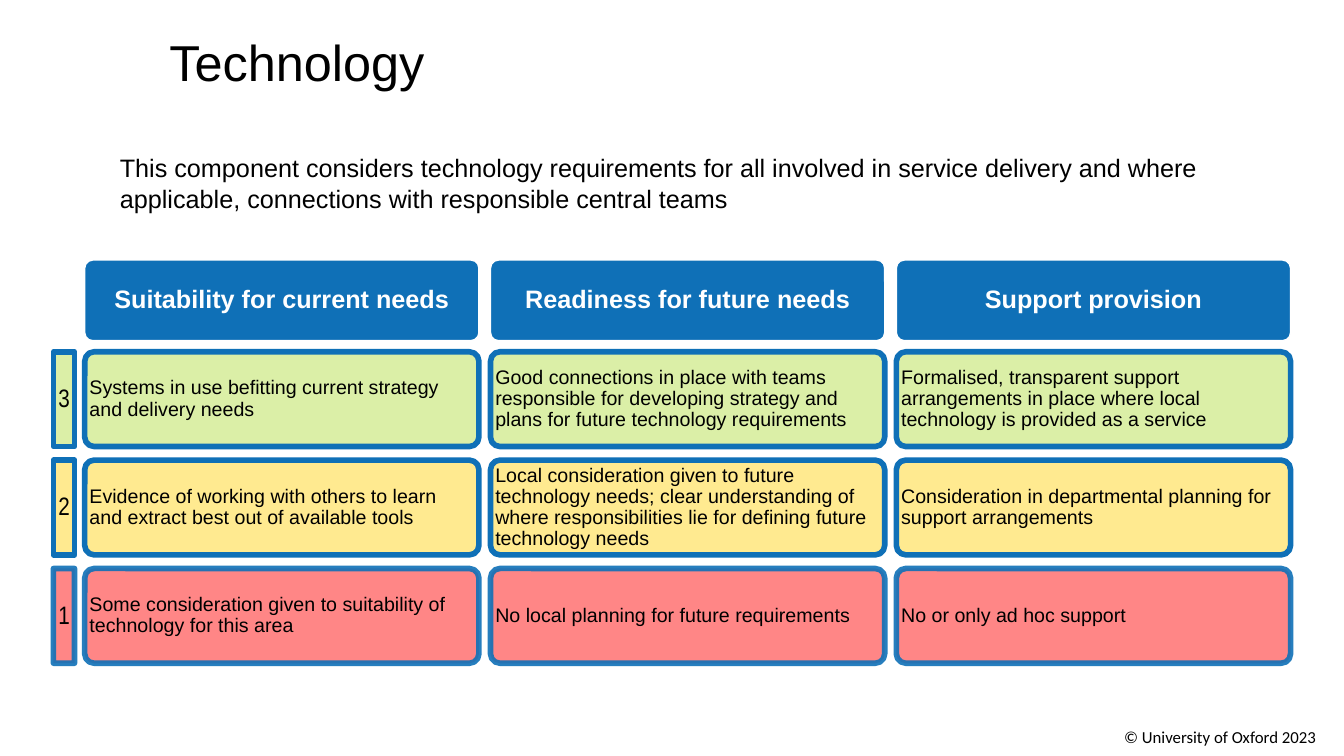
from lxml.etree import SubElement
from pptx import Presentation
from pptx.dml.color import RGBColor
from pptx.enum.shapes import MSO_SHAPE
from pptx.enum.text import MSO_ANCHOR, MSO_AUTO_SIZE, PP_ALIGN
from pptx.oxml.ns import qn
from pptx.util import Inches, Pt

BLACK = RGBColor(0x00, 0x00, 0x00)
WHITE = RGBColor(0xFF, 0xFF, 0xFF)
BLUE = RGBColor(0x0F, 0x70, 0xB7)
GREEN = RGBColor(0xD8, 0xEE, 0x9E)
YELLOW = RGBColor(0xFF, 0xE8, 0x85)
RED = RGBColor(0xFF, 0x79, 0x79)

# Content
TITLE = "Technology"
INTRO = ("This component considers technology requirements for all involved in "
         "service delivery and where applicable, connections with responsible central teams")
COPYRIGHT = "© University of Oxford 2023"
HEADINGS = ["Suitability for current needs", "Readiness for future needs", "Support provision"]
# level, fill, outline opacity (%), one text per heading
LEVELS = [
    ("3", GREEN, 100, [
        "Systems in use befitting current strategy and delivery needs",
        "Good connections in place with teams responsible for developing strategy "
        "and plans for future technology requirements",
        "Formalised, transparent support arrangements in place where local "
        "technology is provided as a service"]),
    ("2", YELLOW, 100, [
        "Evidence of working with others to learn and extract best out of available tools",
        "Local consideration given to future technology needs; clear understanding of "
        "where responsibilities lie for defining future technology needs",
        "Consideration in departmental planning for support arrangements"]),
    ("1", RED, 90, [
        "Some consideration given to suitability of technology for this area",
        "No local planning for future requirements",
        "No or only ad hoc support"]),
]

# Grid, in inches
LABEL_X, LABEL_W = 0.53, 0.21
COL_X, COL_W, COL_STEP = 0.84, 3.91, 4.025
HEAD_Y, HEAD_H = 2.58, 0.8
ROW_Y, ROW_H, ROW_STEP = 3.49, 0.94, 1.075


def write(s, text, size, color=BLACK, font="Arial", bold=False,
          align=PP_ALIGN.LEFT, anchor=MSO_ANCHOR.TOP, spacing=1.0):
    tf = s.text_frame
    tf.text = text
    tf.word_wrap = True
    tf.auto_size = MSO_AUTO_SIZE.NONE
    tf.vertical_anchor = anchor
    p = tf.paragraphs[0]
    p.alignment = align
    p.line_spacing = spacing
    r = p.runs[0]
    r.font.name, r.font.size, r.font.bold = font, Pt(size), bold
    r.font.color.rgb = color


def set_opacity(parent, percent):
    color = parent.find(qn("a:solidFill")).find(qn("a:srgbClr"))
    SubElement(color, qn("a:alpha")).set("val", str(percent * 1000))


def add_box(kind, x, y, w, h, fill, line, line_width, inset):
    s = slide.shapes.add_shape(kind, Inches(x), Inches(y), Inches(w), Inches(h))
    s.shadow.inherit = False
    s.fill.solid()
    s.fill.fore_color.rgb = fill
    s.line.color.rgb = line
    s.line.width = Pt(line_width)
    if kind == MSO_SHAPE.ROUNDED_RECTANGLE:
        s.adjustments[0] = 0.1
    tf = s.text_frame
    tf.margin_left = tf.margin_right = Inches(inset)
    tf.margin_top = tf.margin_bottom = Inches(0.02)
    return s


def add_level_box(kind, x, y, w, fill, opacity, inset):
    s = add_box(kind, x, y, w, ROW_H, fill, BLUE, 4, inset)
    set_opacity(s.element.spPr, 90)
    if opacity < 100:
        set_opacity(s.line._get_or_add_ln(), opacity)
    return s


def add_text(text, x, y, w, h, size, **style):
    s = slide.shapes.add_textbox(Inches(x), Inches(y), Inches(w), Inches(h))
    write(s, text, size, **style)


prs = Presentation()
prs.slide_width, prs.slide_height = Inches(13.33), Inches(7.5)
slide = prs.slides.add_slide(prs.slide_layouts[5])

# Title, introduction and copyright line
title = slide.shapes.title
title.left, title.top, title.width, title.height = (Inches(v) for v in (1.58, 0.26, 9, 0.71))
write(title, TITLE, 36)
add_text(INTRO, 1.09, 1.46, 11.45, 0.71, 18, anchor=MSO_ANCHOR.MIDDLE)
add_text(COPYRIGHT, 11.05, 7.16, 2.28, 0.3, 12, font="Calibri")

# Column headings
for col, heading in enumerate(HEADINGS):
    s = add_box(MSO_SHAPE.ROUNDED_RECTANGLE, COL_X + col * COL_STEP, HEAD_Y,
                COL_W, HEAD_H, BLUE, WHITE, 1, 0.02)
    write(s, heading, 18, color=WHITE, bold=True, align=PP_ALIGN.CENTER,
          anchor=MSO_ANCHOR.MIDDLE, spacing=0.9)

# Level labels and descriptions
for row, (level, fill, opacity, texts) in enumerate(LEVELS):
    y = ROW_Y + row * ROW_STEP
    s = add_level_box(MSO_SHAPE.RECTANGLE, LABEL_X, y, LABEL_W, fill, opacity, 0.05)
    write(s, level, 18, font="Arial Narrow", anchor=MSO_ANCHOR.MIDDLE, spacing=0.9)
    for col, text in enumerate(texts):
        s = add_level_box(MSO_SHAPE.ROUNDED_RECTANGLE, COL_X + col * COL_STEP, y,
                          COL_W, fill, opacity, 0.02)
        write(s, text, 14, anchor=MSO_ANCHOR.MIDDLE, spacing=0.9)

prs.save("out.pptx")
